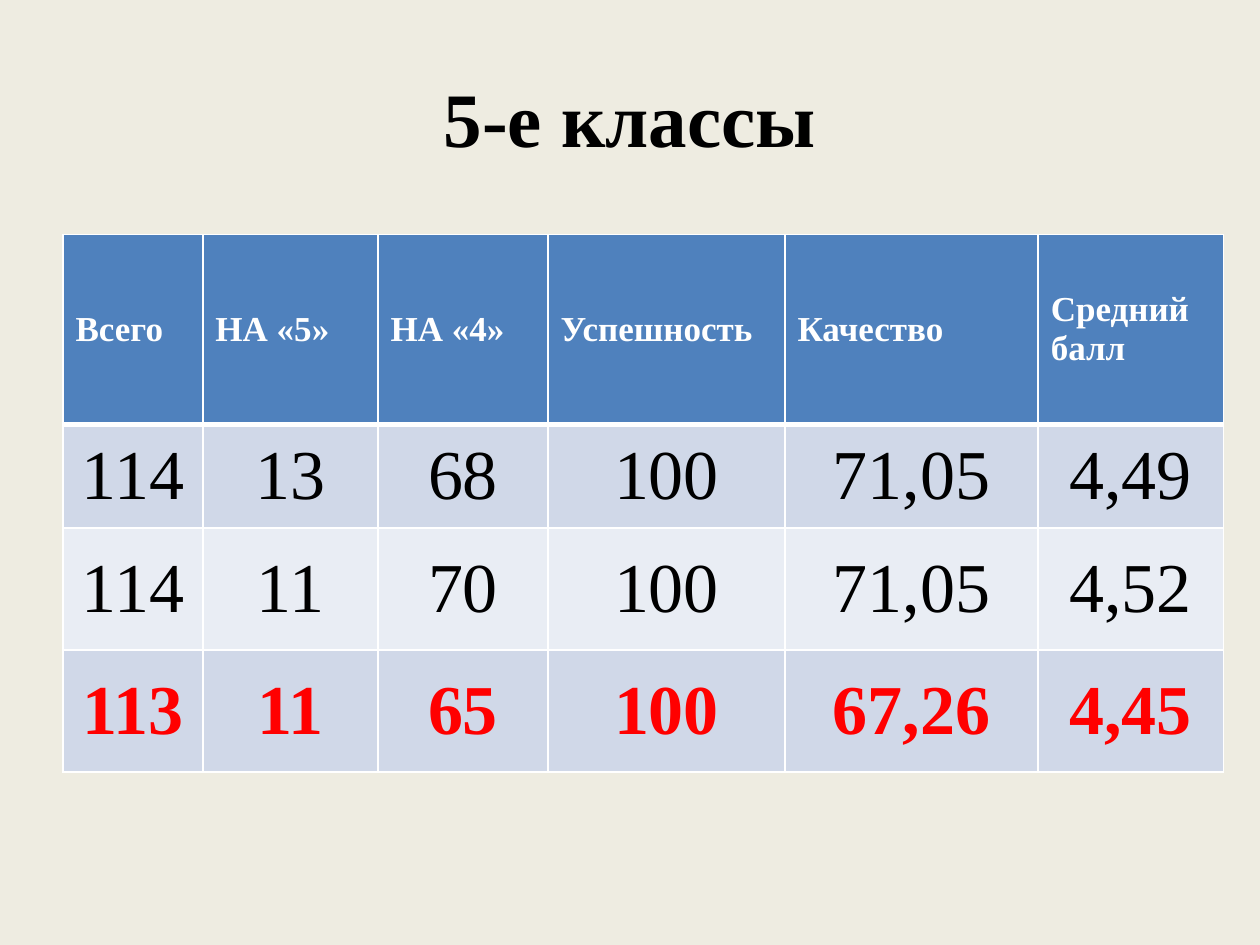
from lxml.etree import SubElement
from pptx import Presentation
from pptx.dml.color import RGBColor
from pptx.enum.text import MSO_ANCHOR, PP_ALIGN
from pptx.oxml.ns import qn
from pptx.util import Inches, Pt

# Content
TITLE = "5-е классы"
HEADERS = ["Всего", "НА «5»", "НА «4»", "Успешность", "Качество", "Средний балл"]
RESULTS = [
    ["114", "13", "68", "100", "71,05", "4,49"],
    ["114", "11", "70", "100", "71,05", "4,52"],
    ["113", "11", "65", "100", "67,26", "4,45"],
]

# Grid and style
COLUMN_WIDTHS = [1.11, 1.39, 1.35, 1.88, 2.01, 1.47]
ROW_HEIGHTS = [1.51, 0.82, 0.97, 0.97]
FONT = "Times New Roman"
COLORS = {
    "background": "EEECE1", "text": "000000", "latest": "FF0000",
    "header": "4F81BD", "header_text": "FFFFFF", "border": "FFFFFF",
    "odd_row": "D0D8E8", "even_row": "E9EDF4",
}


def color(name):
    return RGBColor.from_string(COLORS[name])


def write(frame, text, size, color_name, bold, align):
    paragraph = frame.paragraphs[0]
    paragraph.alignment = align
    run = paragraph.add_run()
    run.text = text
    run.font.name, run.font.size, run.font.bold = FONT, Pt(size), bold
    run.font.color.rgb = color(color_name)


def add_borders(cell, top, bottom):
    properties = cell._tc.get_or_add_tcPr()
    for side, width in (("L", 1), ("R", 1), ("T", top), ("B", bottom)):
        line = SubElement(properties, qn(f"a:ln{side}"), w=str(Pt(width)))
        fill = SubElement(line, qn("a:solidFill"))
        SubElement(fill, qn("a:srgbClr"), val=COLORS["border"])


prs = Presentation()
prs.slide_width, prs.slide_height = Inches(10), Inches(7.5)
slide = prs.slides.add_slide(prs.slide_layouts[5])
slide.background.fill.solid()
slide.background.fill.fore_color.rgb = color("background")

# Title
title = slide.shapes.title
title.left, title.top = Inches(0.5), Inches(0.3)
title.width, title.height = Inches(9), Inches(1.25)
title.text_frame.vertical_anchor = MSO_ANCHOR.MIDDLE
write(title.text_frame, TITLE, 44, "text", True, PP_ALIGN.CENTER)

# Results table
rows = [HEADERS] + RESULTS
table = slide.shapes.add_table(
    len(rows), len(HEADERS), Inches(0.5), Inches(1.86),
    Inches(sum(COLUMN_WIDTHS)), Inches(sum(ROW_HEIGHTS))).table
for column, width in zip(table.columns, COLUMN_WIDTHS):
    column.width = Inches(width)
for row, height in zip(table.rows, ROW_HEIGHTS):
    row.height = Inches(height)

for r, values in enumerate(rows):
    is_header, is_latest = r == 0, r == len(rows) - 1
    if is_header:
        fill_name, style = "header", (20, "header_text", True, PP_ALIGN.LEFT)
    else:
        fill_name = "odd_row" if r % 2 else "even_row"
        style = (40, "latest" if is_latest else "text", is_latest, PP_ALIGN.CENTER)
    for c, value in enumerate(values):
        cell = table.cell(r, c)
        cell.vertical_anchor = MSO_ANCHOR.MIDDLE
        add_borders(cell, top=3 if r == 1 else 1, bottom=3 if is_header else 1)
        cell.fill.solid()
        cell.fill.fore_color.rgb = color(fill_name)
        write(cell.text_frame, value, *style)

prs.save("out.pptx")
